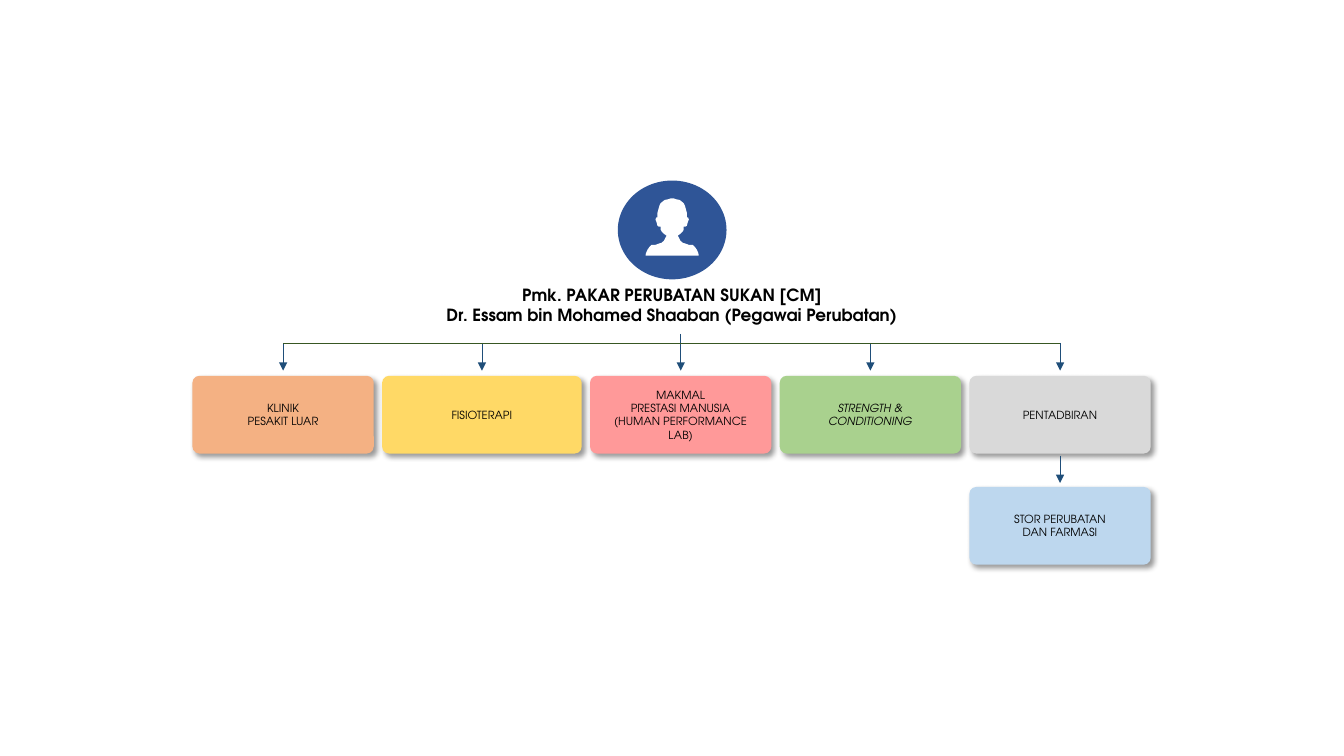
from lxml import etree
from pptx import Presentation
from pptx.dml.color import RGBColor
from pptx.enum.shapes import MSO_CONNECTOR, MSO_SHAPE
from pptx.enum.text import MSO_ANCHOR, MSO_AUTO_SIZE, PP_ALIGN
from pptx.oxml import parse_xml
from pptx.oxml.ns import nsdecls, qn
from pptx.util import Cm, Pt

STRAIGHT = MSO_CONNECTOR.STRAIGHT
OVAL, ROUNDED = MSO_SHAPE.OVAL, MSO_SHAPE.ROUNDED_RECTANGLE
MIDDLE, CENTER = MSO_ANCHOR.MIDDLE, PP_ALIGN.CENTER
GROW = MSO_AUTO_SIZE.SHAPE_TO_FIT_TEXT

BLACK = RGBColor(0x00, 0x00, 0x00)
WHITE = RGBColor(0xFF, 0xFF, 0xFF)
BADGE_BLUE = RGBColor(0x2F, 0x55, 0x97)
ARROW_BLUE = RGBColor(0x1F, 0x4E, 0x79)
BUS_GREEN = RGBColor(0x38, 0x57, 0x23)
ORANGE = RGBColor(0xF4, 0xB1, 0x83)
YELLOW = RGBColor(0xFF, 0xD9, 0x66)
PINK = RGBColor(0xFF, 0x99, 0x99)
GREEN = RGBColor(0xA9, 0xD1, 0x8E)
GREY = RGBColor(0xD9, 0xD9, 0xD9)
PALE_BLUE = RGBColor(0xBD, 0xD7, 0xEE)

FONT = "TeX Gyre Adventor"
HEAD_FONT = {"name": FONT, "size": Pt(12), "bold": True}
UNIT_FONT = {"name": FONT, "size": Pt(8)}

# Lengths in cm
UNIT_W, UNIT_H, UNIT_GAP = 4.57, 1.96, 0.21
BUS_DROP = 0.23
ARROW_GAP = 0.13
STORE_DROP = 2.8

HEAD = ["Pmk. PAKAR PERUBATAN SUKAN [CM]",
        "Dr. Essam bin Mohamed Shaaban (Pegawai Perubatan)"]
UNITS = [
    (["KLINIK", "PESAKIT LUAR"], ORANGE, UNIT_W, {}),
    (["FISIOTERAPI"], YELLOW, 5.03, {}),
    (["MAKMAL", "PRESTASI MANUSIA", "(HUMAN PERFORMANCE LAB)"], PINK, UNIT_W, {}),
    (["STRENGTH &", "CONDITIONING"], GREEN, UNIT_W, {"italic": True}),
    (["PENTADBIRAN"], GREY, UNIT_W, {}),
]
STORE = ["STOR PERUBATAN", "DAN FARMASI"]

# Right half of the bust from crown to base, in 0.01 cm from the crown
BUST_HALF = [
    (0, 0), (4, 0), (9, 2), (19, 4), (24, 8), (29, 12), (32, 18), (34, 25),
    (37, 36), (37, 48), (40, 48), (42, 53), (39, 61), (37, 69), (34, 71),
    (29, 71), (29, 79), (26, 84), (21, 89), (14, 94), (17, 99), (21, 107),
    (27, 112), (34, 114), (42, 117), (52, 117), (57, 122), (62, 129),
    (66, 138), (67, 144),
]


def paint(shape, color):
    shape.shadow.inherit = False
    shape.fill.solid()
    shape.fill.fore_color.rgb = color
    shape.line.fill.background()


def write_lines(frame, lines, font_format):
    frame.word_wrap = True
    for index, line in enumerate(lines):
        paragraph = frame.paragraphs[0] if index == 0 else frame.add_paragraph()
        paragraph.alignment = CENTER
        run = paragraph.add_run()
        run.text = line
        run.font.color.rgb = BLACK
        for name, value in font_format.items():
            setattr(run.font, name, value)


def add_line(slide, start, end, color, arrow=True):
    line = slide.shapes.add_connector(STRAIGHT, *map(Cm, (*start, *end)))
    line.line.color.rgb = color
    line.line.width = Pt(0.5)
    if arrow:
        etree.SubElement(line.line._get_or_add_ln(), qn("a:tailEnd"), type="triangle")
    etree.SubElement(line._element.spPr, qn("a:effectLst"))


def add_badge(slide, left, top, width, height):
    """Draw the round badge with a plain bust inside."""
    paint(slide.shapes.add_shape(OVAL, Cm(left), Cm(top), Cm(width), Cm(height)), BADGE_BLUE)
    mirrored = [(-x, y) for x, y in reversed(BUST_HALF[1:])]
    builder = slide.shapes.build_freeform(*BUST_HALF[0], scale=Cm(0.01))
    builder.add_line_segments(BUST_HALF[1:] + mirrored, close=True)
    paint(builder.convert_to_shape(Cm(left + width / 2), Cm(top + 0.45)), WHITE)


def add_head_title(slide, left, top, width, height):
    title = slide.shapes.add_textbox(Cm(left), Cm(top), Cm(width), Cm(height))
    write_lines(title.text_frame, HEAD, HEAD_FONT)
    title.text_frame.auto_size = GROW


def add_unit(slide, left, top, width, lines, color, font_format):
    unit = slide.shapes.add_shape(ROUNDED, Cm(left), Cm(top), Cm(width), Cm(UNIT_H))
    unit.adjustments[0] = 0.09
    paint(unit, color)
    effects = unit._element.spPr.find(qn("a:effectLst"))
    effects.append(parse_xml(
        f'<a:outerShdw {nsdecls("a")} blurRad="{Pt(4)}" dist="{Pt(3)}" dir="2700000" '
        'algn="tl" rotWithShape="0"><a:srgbClr val="000000"><a:alpha val="40000"/>'
        '</a:srgbClr></a:outerShdw>'))
    unit.text_frame.vertical_anchor = MIDDLE
    write_lines(unit.text_frame, lines, UNIT_FONT | font_format)


def add_units(slide, left, top, units_top):
    """Draw the stem, the bus, the row of units and the store under the last."""
    bus_y = top + BUS_DROP
    arrow_end = units_top - ARROW_GAP
    centers = []
    for index, (lines, color, width, font_format) in enumerate(UNITS):
        add_unit(slide, left, units_top, width, lines, color, font_format)
        center = left + width / 2
        centers.append(center)
        is_stem = index == len(UNITS) // 2
        add_line(slide, (center, top if is_stem else bus_y), (center, arrow_end), ARROW_BLUE)
        last_left = left
        left += width + UNIT_GAP
    add_line(slide, (centers[0], bus_y), (centers[-1], bus_y), BUS_GREEN, arrow=False)

    store_top = units_top + STORE_DROP
    add_unit(slide, last_left, store_top, UNIT_W, STORE, PALE_BLUE, {})
    add_line(slide, (centers[-1], units_top + UNIT_H + 0.05),
             (centers[-1], store_top - 0.1), ARROW_BLUE)


def main():
    deck = Presentation()
    deck.slide_width, deck.slide_height = Cm(33.87), Cm(19.05)
    slide = deck.slides.add_slide(deck.slide_layouts[6])
    add_badge(slide, 15.57, 4.55, 2.74, 2.49)
    add_head_title(slide, 6.99, 7.04, 19.89, 1.27)
    add_units(slide, 4.85, 8.41, 9.47)
    deck.save("out.pptx")


if __name__ == "__main__":
    main()
